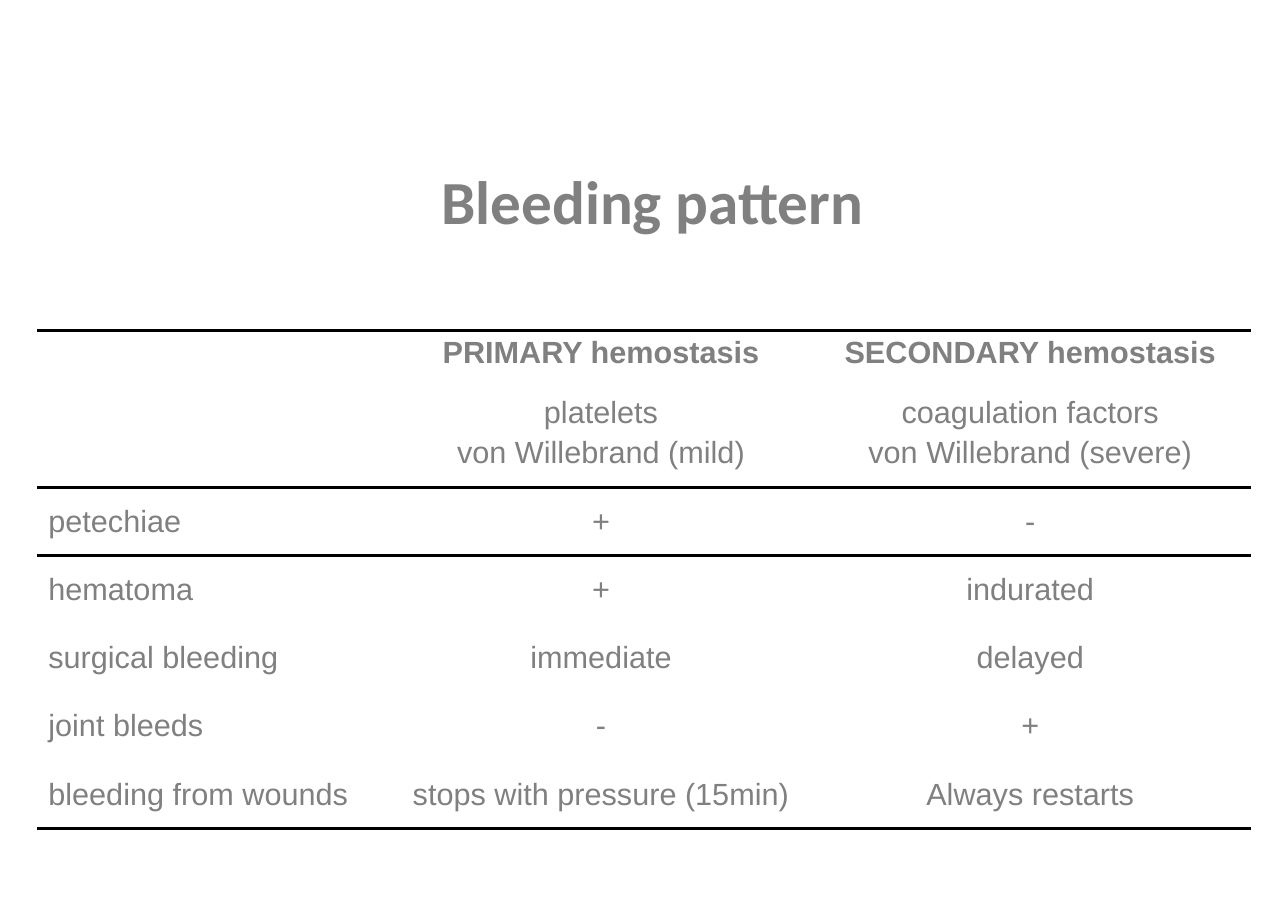
from dataclasses import dataclass

from lxml import etree
from pptx import Presentation
from pptx import util as u
from pptx.dml.color import RGBColor
from pptx.enum import text
from pptx.oxml import ns

NO_STYLE = "{2D5ABB26-0587-4C30-8999-92F81FD0307C}"

HEADER = ["", "PRIMARY hemostasis", "SECONDARY hemostasis"]
CAUSES = ["", "platelets\nvon Willebrand (mild)", "coagulation factors\nvon Willebrand (severe)"]
SIGNS = [
    ["petechiae", "+", "-"],
    ["hematoma", "+", "indurated"],
    ["surgical bleeding", "immediate", "delayed"],
    ["joint bleeds", "-", "+"],
    ["bleeding from wounds", "stops with pressure (15min)", "Always restarts"],
]
COLUMN_WIDTHS = [232.4, 272, 289]
ROW_HEIGHTS = [31.2, 71.4] + [44.6] * len(SIGNS)


@dataclass(frozen=True)
class Theme:
    title_font: str = "Calibri"
    body_font: str = "Arial"
    title_size: float = 40
    body_size: float = 20
    paragraph_gap: float = 4
    text_color: str = "808080"
    rule_color: str = "000000"
    rule_width: float = 2.25


def write_text(frame, content, *, font, size, color, bold=False,
               align=text.PP_ALIGN.CENTER, gap=0):
    """Fill a text frame with one paragraph per line of content."""
    for index, line in enumerate(content.split("\n")):
        paragraph = frame.add_paragraph() if index else frame.paragraphs[0]
        paragraph.text = line
        paragraph.alignment = align
        paragraph.space_before = u.Pt(gap if index else 0)
        paragraph.font.name = font
        paragraph.font.size = u.Pt(size)
        paragraph.font.bold = bold
        paragraph.font.color.rgb = RGBColor.from_string(color)


class SlideBuilder:
    def __init__(self, slide, theme):
        self.slide = slide
        self.theme = theme

    def title(self, content, left, top, width, height):
        shape = self.slide.shapes.title
        shape.left, shape.top = u.Pt(left), u.Pt(top)
        shape.width, shape.height = u.Pt(width), u.Pt(height)
        frame = shape.text_frame
        frame.auto_size = text.MSO_AUTO_SIZE.NONE
        frame.vertical_anchor = text.MSO_ANCHOR.MIDDLE
        write_text(frame, content, font=self.theme.title_font,
                   size=self.theme.title_size, color=self.theme.text_color, bold=True)

    def rule(self, cell, side):
        """Draw a cell border on side "T" (top) or "B" (bottom)."""
        properties = cell._tc.get_or_add_tcPr()
        line = etree.SubElement(properties, ns.qn(f"a:ln{side}"),
                                w=str(u.Pt(self.theme.rule_width)))
        fill = etree.SubElement(line, ns.qn("a:solidFill"))
        etree.SubElement(fill, ns.qn("a:srgbClr"), val=self.theme.rule_color)

    def table(self, rows, left, top, widths, heights, rules):
        """Add a table; rules maps a row index to the sides that are ruled."""
        shape = self.slide.shapes.add_table(
            len(rows), len(widths), u.Pt(left), u.Pt(top),
            u.Pt(sum(widths)), u.Pt(sum(heights)))
        table = shape.table
        table.first_row = table.horz_banding = False
        table._tbl.tblPr.find(ns.qn("a:tableStyleId")).text = NO_STYLE
        for column, width in zip(table.columns, widths):
            column.width = u.Pt(width)
        for row, height in zip(table.rows, heights):
            row.height = u.Pt(height)
        for row_index, row in enumerate(rows):
            for column_index, content in enumerate(row):
                cell = table.cell(row_index, column_index)
                is_header, is_label = row_index == 0, column_index == 0
                cell.vertical_anchor = text.MSO_ANCHOR.TOP if is_header else text.MSO_ANCHOR.MIDDLE
                for side in rules.get(row_index, ""):
                    self.rule(cell, side)
                cell.fill.background()
                if content:
                    write_text(cell.text_frame, content, font=self.theme.body_font,
                               size=self.theme.body_size, color=self.theme.text_color,
                               bold=is_header, gap=self.theme.paragraph_gap,
                               align=text.PP_ALIGN.LEFT if is_label else text.PP_ALIGN.CENTER)


def main():
    presentation = Presentation()
    presentation.slide_width = u.Pt(841.68)
    presentation.slide_height = u.Pt(595.44)
    title_only = presentation.slide_layouts[5]
    builder = SlideBuilder(presentation.slides.add_slide(title_only), Theme())
    builder.title("Bleeding pattern", 52.5, 99.5, 747.5, 62.5)
    rows = [HEADER, CAUSES, *SIGNS]
    builder.table(rows, 24.4, 216, COLUMN_WIDTHS, ROW_HEIGHTS,
                  rules={0: "T", 1: "B", 2: "T", len(rows) - 1: "B"})
    presentation.save("out.pptx")


if __name__ == "__main__":
    main()
